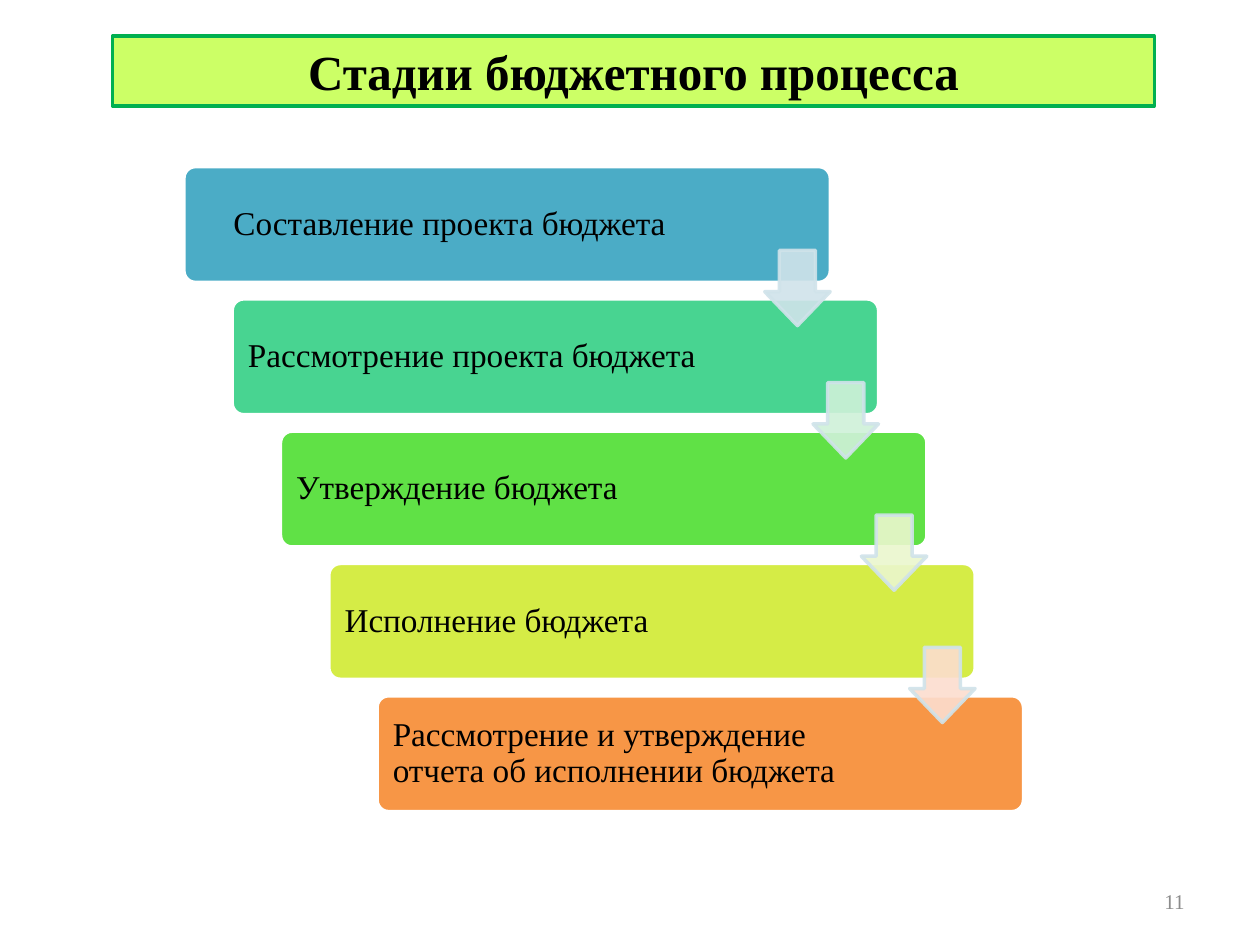
from pptx import Presentation
from pptx.dml.color import RGBColor
from pptx.enum.shapes import MSO_SHAPE as Preset
from pptx.enum.text import MSO_ANCHOR as Anchor, MSO_AUTO_SIZE as AutoSize, PP_ALIGN as Align
from pptx.oxml import parse_xml
from pptx.oxml.ns import nsdecls, qn
from pptx.util import Pt

BLACK = RGBColor(0x00, 0x00, 0x00)
WHITE = RGBColor(0xFF, 0xFF, 0xFF)
GRAY = RGBColor(0x8C, 0x8C, 0x8C)
LIME = RGBColor(0xCC, 0xFF, 0x66)
GREEN = RGBColor(0x00, 0xB0, 0x50)
ARROW_EDGE = RGBColor(0xD0, 0xE3, 0xEA)

STAGES = [
    ("Составление проекта бюджета", RGBColor(0x4B, 0xAC, 0xC6), Align.CENTER),
    ("Рассмотрение проекта бюджета", RGBColor(0x48, 0xD4, 0x91), Align.LEFT),
    ("Утверждение бюджета", RGBColor(0x60, 0xE1, 0x46), Align.LEFT),
    ("Исполнение бюджета", RGBColor(0xD5, 0xEC, 0x46), Align.LEFT),
    ("Рассмотрение и утверждение отчета об исполнении бюджета",
     RGBColor(0xF7, 0x96, 0x46), Align.LEFT),
]
ARROW_FILLS = [
    ARROW_EDGE,
    RGBColor(0xCF, 0xF1, 0xD9),
    RGBColor(0xEB, 0xF7, 0xCE),
    RGBColor(0xFC, 0xDD, 0xCF),
]
STEP_X, STEP_Y = 27.6, 75.6


class SlideBuilder:
    font_name = "Times New Roman"
    line_width = Pt(2)

    def __init__(self, slide):
        self.slide = slide

    def paint(self, shape, fill, line):
        shape.fill.solid()
        shape.fill.fore_color.rgb = fill
        shape.line.color.rgb = line
        shape.line.width = self.line_width
        shape.shadow.inherit = False

    def set_text(self, shape, text, size, align, color=BLACK, bold=False):
        frame = shape.text_frame
        frame.text = text
        frame.word_wrap = True
        frame.auto_size = AutoSize.NONE
        frame.vertical_anchor = Anchor.MIDDLE
        paragraph = frame.paragraphs[0]
        paragraph.alignment = align
        font = paragraph.runs[0].font
        font.name, font.size, font.bold = self.font_name, Pt(size), bold
        font.color.rgb = color
        return paragraph

    def title(self, text, left, top, width, height):
        shape = self.slide.shapes.title
        shape.left, shape.top = Pt(left), Pt(top)
        shape.width, shape.height = Pt(width), Pt(height)
        shape._element.spPr.append(parse_xml(
            f'<a:prstGeom {nsdecls("a")} prst="roundRect"><a:avLst/></a:prstGeom>'))
        self.paint(shape, LIME, GREEN)
        self.set_text(shape, text, 28, Align.CENTER, bold=True)

    def stage(self, text, fill, align, left, top):
        shape = self.slide.shapes.add_shape(
            Preset.ROUNDED_RECTANGLE, Pt(left), Pt(top), Pt(369.4), Pt(66.2))
        shape.adjustments[0] = 0.1
        self.paint(shape, fill, WHITE)
        paragraph = self.set_text(shape, text, 19, align)
        paragraph.line_spacing = 0.9
        frame = shape.text_frame
        frame.margin_left = frame.margin_top = frame.margin_bottom = Pt(7.2)
        frame.margin_right = Pt(72.7)

    def arrow(self, fill, left, top):
        shape = self.slide.shapes.add_shape(
            Preset.DOWN_ARROW, Pt(left), Pt(top), Pt(37.4), Pt(43))
        shape.adjustments[0] = 0.55
        shape.adjustments[1] = 0.52
        self.paint(shape, fill, ARROW_EDGE)
        for color in shape._element.spPr.iter(qn("a:srgbClr")):
            color.append(parse_xml(f'<a:alpha {nsdecls("a")} val="90000"/>'))

    def page_number(self, text, left, top, width, height):
        shape = self.slide.shapes.add_textbox(Pt(left), Pt(top), Pt(width), Pt(height))
        self.set_text(shape, text, 12, Align.RIGHT, GRAY)


def main():
    presentation = Presentation()
    presentation.slide_width, presentation.slide_height = Pt(720), Pt(540)
    title_only = presentation.slide_layouts[5]
    builder = SlideBuilder(presentation.slides.add_slide(title_only))

    builder.title("Стадии бюджетного процесса", 64.3, 20.7, 595.4, 39.8)
    for index, (text, fill, align) in enumerate(STAGES):
        builder.stage(text, fill, align, 105.1 + index * STEP_X, 95.2 + index * STEP_Y)
    for index, fill in enumerate(ARROW_FILLS):
        builder.arrow(fill, 437 + index * STEP_X, 143.1 + index * STEP_Y)
    builder.page_number("11", 516, 500.5, 168, 28.8)

    presentation.save("out.pptx")


if __name__ == "__main__":
    main()
